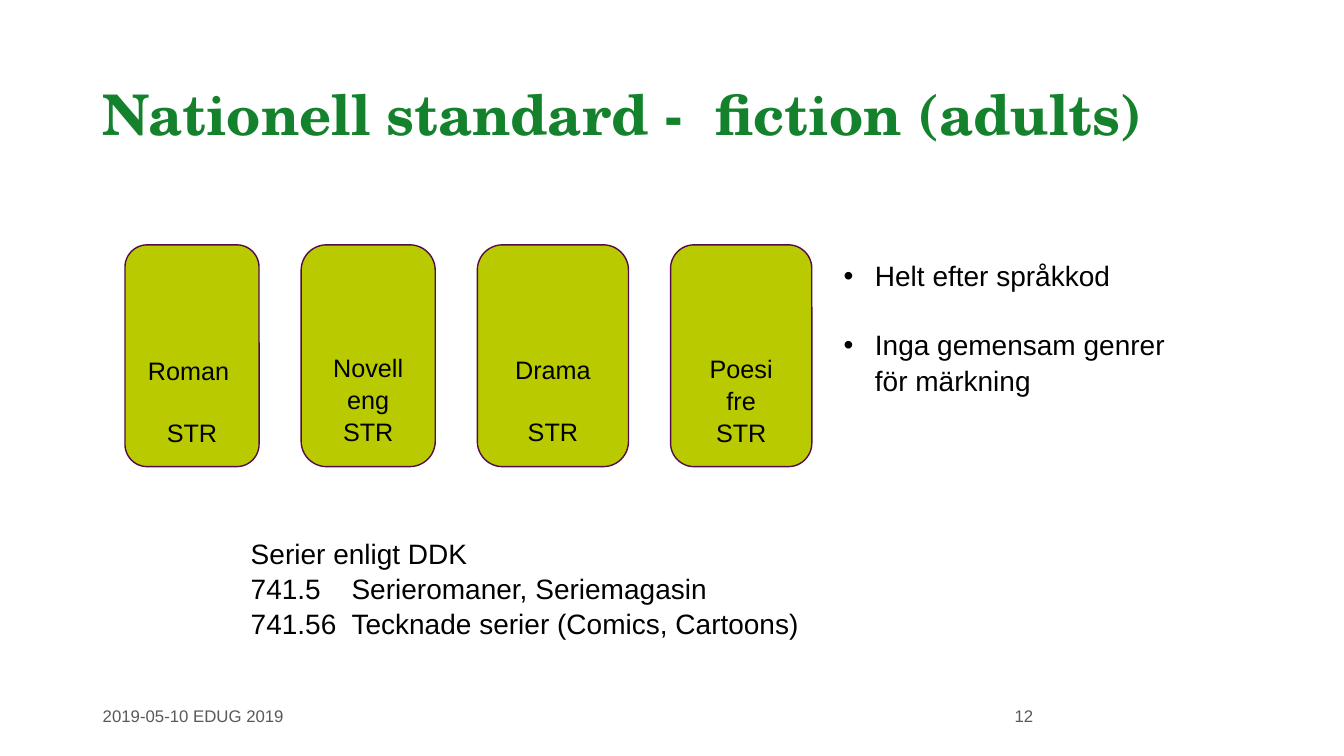
from lxml.etree import SubElement
from pptx import Presentation
from pptx.dml.color import RGBColor
from pptx.enum.shapes import MSO_SHAPE
from pptx.enum.text import MSO_ANCHOR, PP_ALIGN
from pptx.oxml.ns import qn
from pptx.util import Cm, Pt

GREEN = RGBColor(0x14, 0x82, 0x2C)
LIME = RGBColor(0xB9, 0xCB, 0x00)
PLUM = RGBColor(0x53, 0x0C, 0x47)
BLACK = RGBColor(0x00, 0x00, 0x00)
GREY = RGBColor(0x59, 0x59, 0x59)

LINE_SPACING = 1.05
CARD_GAP = 1.06
# Card width, corner rounding and lines; None leaves a line free
CARDS = [
    (3.38, 0.1667, ["Roman ", None, "STR"]),
    (3.38, 0.19, ["Novell", "eng", "STR"]),
    (3.81, 0.1667, ["Drama", None, "STR"]),
    (3.56, 0.1667, ["Poesi", "fre", "STR"]),
]


def style(paragraph, size, color=BLACK, name="Arial", bold=False, spacing=LINE_SPACING):
    paragraph.line_spacing = spacing
    font = paragraph.font
    font.name, font.size, font.bold = name, Pt(size), bold
    font.color.rgb = color


def add_paragraphs(frame, lines):
    for index, line in enumerate(lines):
        paragraph = frame.add_paragraph() if index else frame.paragraphs[0]
        paragraph.text = line
        yield paragraph


def add_text_frame(slide, left, top, width, height):
    box = slide.shapes.add_textbox(Cm(left), Cm(top), Cm(width), Cm(height))
    box.text_frame.word_wrap = True
    return box.text_frame


def add_line(slide, left, top, width, height, text, **font):
    frame = add_text_frame(slide, left, top, width, height)
    frame.text = text
    style(frame.paragraphs[0], **font)


def add_card(slide, left, top, width, height, rounding, lines):
    card = slide.shapes.add_shape(
        MSO_SHAPE.ROUNDED_RECTANGLE, Cm(left), Cm(top), Cm(width), Cm(height))
    card.adjustments[0] = rounding
    card.shadow.inherit = False
    card.fill.solid()
    card.fill.fore_color.rgb = LIME
    card.line.color.rgb = PLUM
    card.line.width = Pt(1)
    frame = card.text_frame
    frame.word_wrap = True
    frame.vertical_anchor = MSO_ANCHOR.BOTTOM
    frame.margin_bottom = Cm(0.32)
    shown = [line for line in lines if line]
    for paragraph in add_paragraphs(frame, shown):
        paragraph.alignment = PP_ALIGN.CENTER
        style(paragraph, 18)
    if None in lines:
        frame.paragraphs[lines.index(None)].space_before = Pt(21.8)


def add_cards(slide, left, top, height):
    for width, rounding, lines in CARDS:
        add_card(slide, left, top, width, height, rounding, lines)
        left += width + CARD_GAP


def add_comics(slide, left, top, width, height):
    frame = add_text_frame(slide, left, top, width, height)
    lines = ["Serier enligt DDK", "741.5\tSerieromaner, Seriemagasin",
             "741.56\tTecknade serier (Comics, Cartoons)"]
    for paragraph in add_paragraphs(frame, lines):
        if "\t" in paragraph.text:
            tabs = SubElement(paragraph._p.get_or_add_pPr(), qn("a:tabLst"))
            SubElement(tabs, qn("a:tab"), pos=str(Cm(2.54)), algn="l")
        style(paragraph, 20)


def add_bullets(slide, left, top, width, height):
    frame = add_text_frame(slide, left, top, width, height)
    lines = ["Helt efter språkkod", "Inga gemensam genrer för märkning"]
    for paragraph in add_paragraphs(frame, lines):
        properties = paragraph._p.get_or_add_pPr()
        properties.set("marL", str(Cm(0.79)))
        properties.set("indent", str(-Cm(0.79)))
        SubElement(properties, qn("a:buFont"), typeface="Arial")
        SubElement(properties, qn("a:buChar"), char="•")
        style(paragraph, 20)
    frame.paragraphs[1].space_before = Pt(24.2)


def add_footer(slide, left, top, height):
    for offset, text in [(0, "2019-05-10 EDUG 2019"), (22.98, "12")]:
        add_line(slide, left + offset, top, 7.62, height, text,
                 size=12, color=GREY, spacing=1.0)


def main():
    presentation = Presentation()
    presentation.slide_width, presentation.slide_height = Cm(33.87), Cm(19.05)
    slide = presentation.slides.add_slide(presentation.slide_layouts[6])
    # Title
    add_line(slide, 2.34, 2.06, 29.41, 2.16, "Nationell standard -  fiction (adults)",
             size=40, color=GREEN, name="TeX Gyre Schola", bold=True, spacing=0.9)
    # Genre cards and remarks
    add_cards(slide, 3.15, 6.17, 5.59)
    add_bullets(slide, 21.01, 6.35, 8.61, 5.21)
    # Comics classes
    add_comics(slide, 6.07, 13.34, 14.4, 2.82)
    # Date and slide number
    add_footer(slide, 2.34, 17.65, 1.02)
    presentation.save("out.pptx")


if __name__ == "__main__":
    main()
